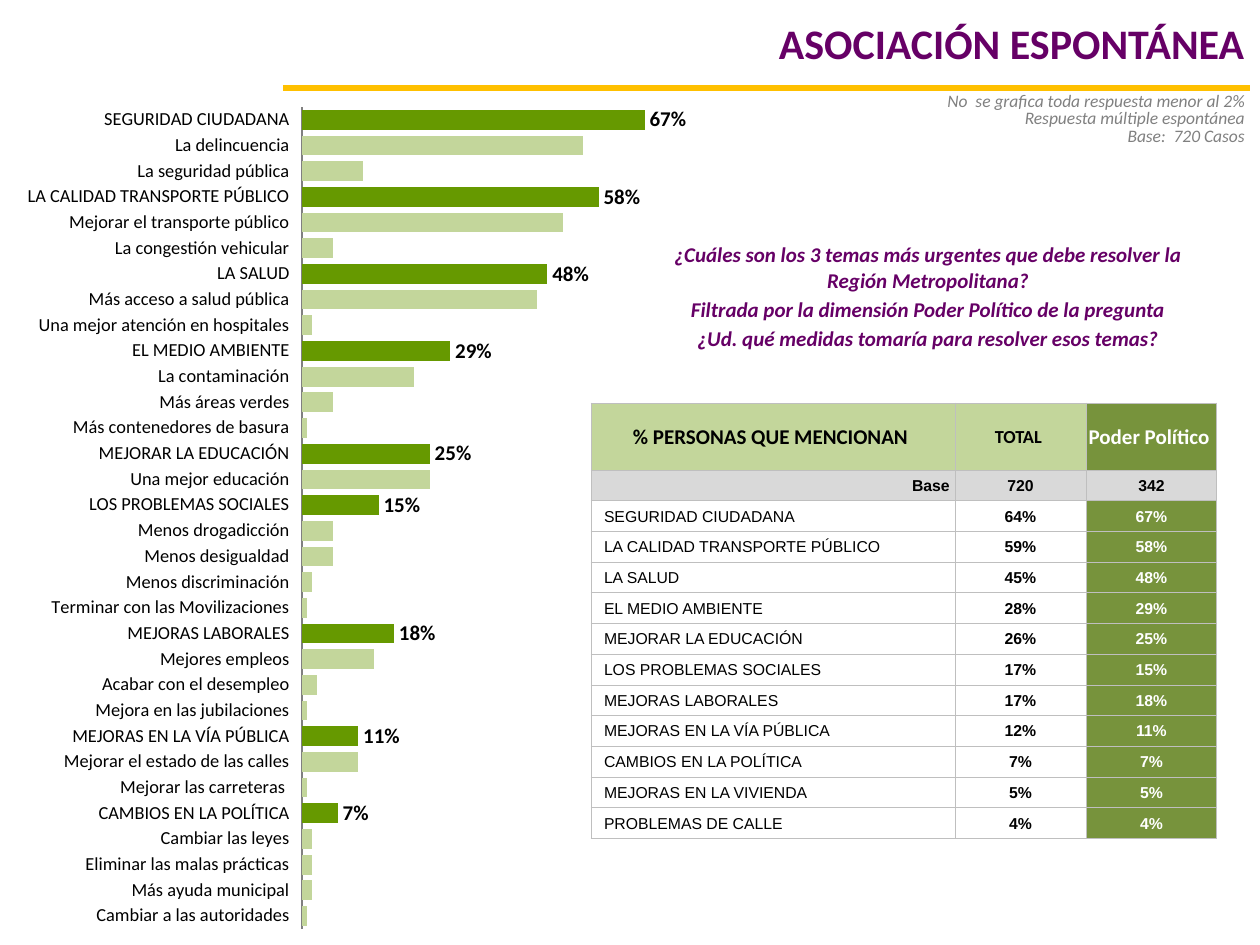
from lxml import etree
from pptx import Presentation
from pptx.chart.data import CategoryChartData
from pptx.dml.color import RGBColor
from pptx.enum.chart import XL_CHART_TYPE, XL_LABEL_POSITION, XL_TICK_LABEL_POSITION, XL_TICK_MARK
from pptx.enum.shapes import MSO_CONNECTOR
from pptx.enum.text import MSO_ANCHOR, PP_ALIGN
from pptx.oxml import parse_xml
from pptx.oxml.ns import nsdecls, qn
from pptx.util import Emu, Pt

# Content
TITLE = "ASOCIACIÓN ESPONTÁNEA"
NOTES = ["No  se grafica toda respuesta menor al 2%", "Respuesta múltiple espontánea",
         "Base:  720 Casos"]
QUESTIONS = ["¿Cuáles son los 3 temas más urgentes que debe resolver la Región Metropolitana?",
             "Filtrada por la dimensión Poder Político de la pregunta",
             "¿Ud. qué medidas tomaría para resolver esos temas?"]
# Each topic: name, percentage, then its detailed answers
TOPICS = [
    ("SEGURIDAD CIUDADANA", 67, [("La delincuencia", 55), ("La seguridad pública", 12)]),
    ("LA CALIDAD TRANSPORTE PÚBLICO", 58, [("Mejorar el transporte público", 51),
                                           ("La congestión vehicular", 6)]),
    ("LA SALUD", 48, [("Más acceso a salud pública", 46),
                      ("Una mejor atención en hospitales", 2)]),
    ("EL MEDIO AMBIENTE", 29, [("La contaminación", 22), ("Más áreas verdes", 6),
                               ("Más contenedores de basura", 1)]),
    ("MEJORAR LA EDUCACIÓN", 25, [("Una mejor educación", 25)]),
    ("LOS PROBLEMAS SOCIALES", 15, [("Menos drogadicción", 6), ("Menos desigualdad", 6),
                                    ("Menos discriminación", 2),
                                    ("Terminar con las Movilizaciones", 1)]),
    ("MEJORAS LABORALES", 18, [("Mejores empleos", 14), ("Acabar con el desempleo", 3),
                               ("Mejora en las jubilaciones", 1)]),
    ("MEJORAS EN LA VÍA PÚBLICA", 11, [("Mejorar el estado de las calles", 11),
                                       ("Mejorar las carreteras ", 1)]),
    ("CAMBIOS EN LA POLÍTICA", 7, [("Cambiar las leyes", 2), ("Eliminar las malas prácticas", 2),
                                   ("Más ayuda municipal", 2), ("Cambiar a las autoridades", 1)]),
]
MENTIONS = [
    ("% PERSONAS QUE MENCIONAN ", "TOTAL ", "Poder Político "),
    ("Base ", "720", "342"),
    ("SEGURIDAD CIUDADANA", "64%", "67%"),
    ("LA CALIDAD TRANSPORTE PÚBLICO", "59%", "58%"),
    ("LA SALUD", "45%", "48%"),
    ("EL MEDIO AMBIENTE", "28%", "29%"),
    ("MEJORAR LA EDUCACIÓN", "26%", "25%"),
    ("LOS PROBLEMAS SOCIALES", "17%", "15%"),
    ("MEJORAS LABORALES", "17%", "18%"),
    ("MEJORAS EN LA VÍA PÚBLICA", "12%", "11%"),
    ("CAMBIOS EN LA POLÍTICA", "7%", "7%"),
    ("MEJORAS EN LA VIVIENDA", "5%", "5%"),
    ("PROBLEMAS DE CALLE", "4%", "4%"),
]
PURPLE, GOLD, GREY, BORDER = "660066", "FFC000", "808080", "BFBFBF"
STRONG, SOFT, OLIVE, BASE = "669900", "C3D69B", "77933C", "D9D9D9"
BLACK, WHITE = "000000", "FFFFFF"


def px(n):
    return Emu(round(n * 914400 / 126))


def rgb(value):
    return RGBColor.from_string(value)


def set_font(font, size, color, bold=False, italic=False, name="Calibri"):
    font.size, font.bold, font.italic, font.name = Pt(size), bold, italic, name
    font.color.rgb = rgb(color)


def fill_frame(frame, lines, align, gap=0, spacing=None, **style):
    frame.word_wrap = True
    frame.text = "\n".join(lines)
    for i, paragraph in enumerate(frame.paragraphs):
        paragraph.alignment = align
        if i and gap:
            paragraph.space_before = Pt(gap)
        if spacing:
            paragraph.line_spacing = Pt(spacing)
        for run in paragraph.runs:
            set_font(run.font, **style)


def set_borders(cell):
    props = cell._tc.get_or_add_tcPr()
    for i, side in enumerate(("lnL", "lnR", "lnT", "lnB")):
        props.insert(i, parse_xml(
            f'<a:{side} {nsdecls("a")} w="6350"><a:solidFill><a:srgbClr val="{BORDER}"/>'
            f'</a:solidFill></a:{side}>'))


prs = Presentation()
prs.slide_width, prs.slide_height = px(1260), px(945)
slide = prs.slides.add_slide(prs.slide_layouts[5])
shapes = slide.shapes

# Title and the rule below it
title = shapes.title
title.left, title.top, title.width, title.height = px(102), px(0), px(1155), px(86)
title.text_frame.vertical_anchor = MSO_ANCHOR.MIDDLE
fill_frame(title.text_frame, [TITLE], PP_ALIGN.RIGHT, size=24, color=PURPLE, bold=True)

rule = shapes.add_connector(MSO_CONNECTOR.STRAIGHT, px(283), px(88), px(1250), px(88))
rule.line.color.rgb = rgb(GOLD)
rule.line.width = Pt(3)
etree.SubElement(rule._element.spPr, qn("a:effectLst"))

# Question and notes
question_box = shapes.add_textbox(px(640), px(234), px(576), px(125))
question_box.text_frame.vertical_anchor = MSO_ANCHOR.MIDDLE
fill_frame(question_box.text_frame, QUESTIONS, PP_ALIGN.CENTER, gap=2.4,
           size=12, color=PURPLE, bold=True, italic=True)
notes_box = shapes.add_textbox(px(760), px(96), px(497), px(60))
fill_frame(notes_box.text_frame, NOTES, PP_ALIGN.RIGHT, gap=5, spacing=5,
           size=10, color=GREY, italic=True)

# Bar chart: topics and their answers in one series
bars = []
for topic, share, answers in TOPICS:
    bars.append((topic, share, True))
    bars += [(answer, part, False) for answer, part in answers]
data = CategoryChartData(number_format="0%")
data.categories = [name for name, _, _ in bars]
data.add_series("Series 1", [share / 100 for _, share, _ in bars])
CHART_W, CHART_H = 684, 824
chart = shapes.add_chart(XL_CHART_TYPE.BAR_CLUSTERED, px(25), px(106),
                         px(CHART_W), px(CHART_H), data).chart
chart.has_legend = chart.has_title = False
set_font(chart.font, 12, BLACK)

topic_axis = chart.category_axis
topic_axis.reverse_order = True
topic_axis.tick_label_position = XL_TICK_LABEL_POSITION.LOW
topic_axis.major_tick_mark = topic_axis.minor_tick_mark = XL_TICK_MARK.NONE
topic_axis.format.line.color.rgb = rgb(GREY)
set_font(topic_axis.tick_labels.font, 10.5, BLACK)
share_axis = chart.value_axis
share_axis.minimum_scale, share_axis.maximum_scale = 0, 0.7
share_axis.has_major_gridlines = share_axis.visible = False

plot = chart.plots[0]
plot.gap_width = 30
plot.vary_by_categories = False
plot.has_data_labels = True
labels = plot.data_labels
labels.show_value = True
labels.number_format, labels.number_format_is_linked = "0%", False
labels.position = XL_LABEL_POSITION.OUTSIDE_END
set_font(labels.font, 12, BLACK)
series = plot.series[0]
series.format.fill.solid()
series.format.fill.fore_color.rgb = rgb(SOFT)
for i, (_, _, is_topic) in enumerate(bars):
    if is_topic:
        point = series.points[i]
        point.format.fill.solid()
        point.format.fill.fore_color.rgb = rgb(STRONG)
        set_font(point.data_label.font, 12, BLACK, bold=True)
        point.data_label.position = XL_LABEL_POSITION.OUTSIDE_END

# Fixed inner plot area
area = {"x": 277 / CHART_W, "y": 1 / CHART_H, "w": 358 / CHART_W, "h": 822 / CHART_H}
plot_area = chart._chartSpace.chart.plotArea
for old in plot_area.findall(qn("c:layout")):
    plot_area.remove(old)
plot_area.insert(0, parse_xml(
    f'<c:layout {nsdecls("c")}><c:manualLayout><c:layoutTarget val="inner"/>'
    '<c:xMode val="edge"/><c:yMode val="edge"/>'
    + "".join(f'<c:{key} val="{value:.4f}"/>' for key, value in area.items())
    + '</c:manualLayout></c:layout>'))

# Mentions table
COL_WIDTHS, HEADER_H, TABLE_H = (364, 131, 131), 67, 436
row_h = (TABLE_H - HEADER_H) / (len(MENTIONS) - 1)
table = shapes.add_table(len(MENTIONS), len(COL_WIDTHS), px(591), px(403),
                         px(sum(COL_WIDTHS)), px(TABLE_H)).table
table.horz_banding = False
for column, width in zip(table.columns, COL_WIDTHS):
    column.width = px(width)
for r, values in enumerate(MENTIONS):
    table.rows[r].height = px(row_h if r else HEADER_H)
    for c, value in enumerate(values):
        cell = table.cell(r, c)
        cell.margin_left = cell.margin_right = cell.margin_top = px(1)
        cell.margin_bottom = 0
        cell.vertical_anchor = MSO_ANCHOR.MIDDLE
        highlighted = c == 2 and r != 1
        background = OLIVE if highlighted else {0: SOFT, 1: BASE}.get(r, WHITE)
        size = 9 if r else (12, 10.5, 12)[c]
        align = PP_ALIGN.CENTER
        if c == 0 and r:
            align = PP_ALIGN.RIGHT if r == 1 else PP_ALIGN.LEFT
        if c == 0 and r > 1:
            cell.margin_left = px(13)
        fill_frame(cell.text_frame, [value], align, size=size,
                   color=WHITE if highlighted else BLACK, bold=r < 2 or c > 0,
                   name="Arial" if r else "Calibri")
        cell.fill.solid()
        cell.fill.fore_color.rgb = rgb(background)
        set_borders(cell)

prs.save("out.pptx")
